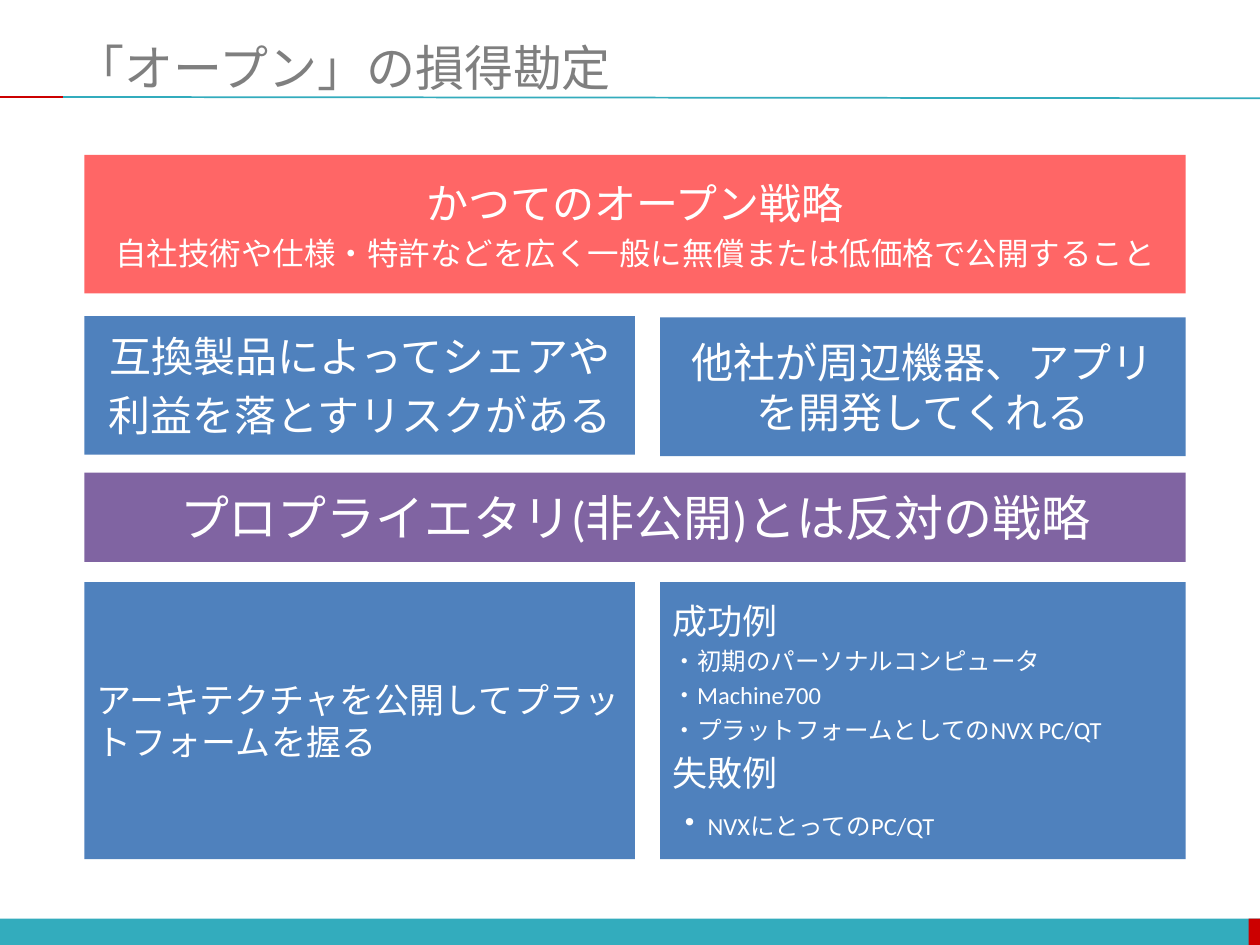
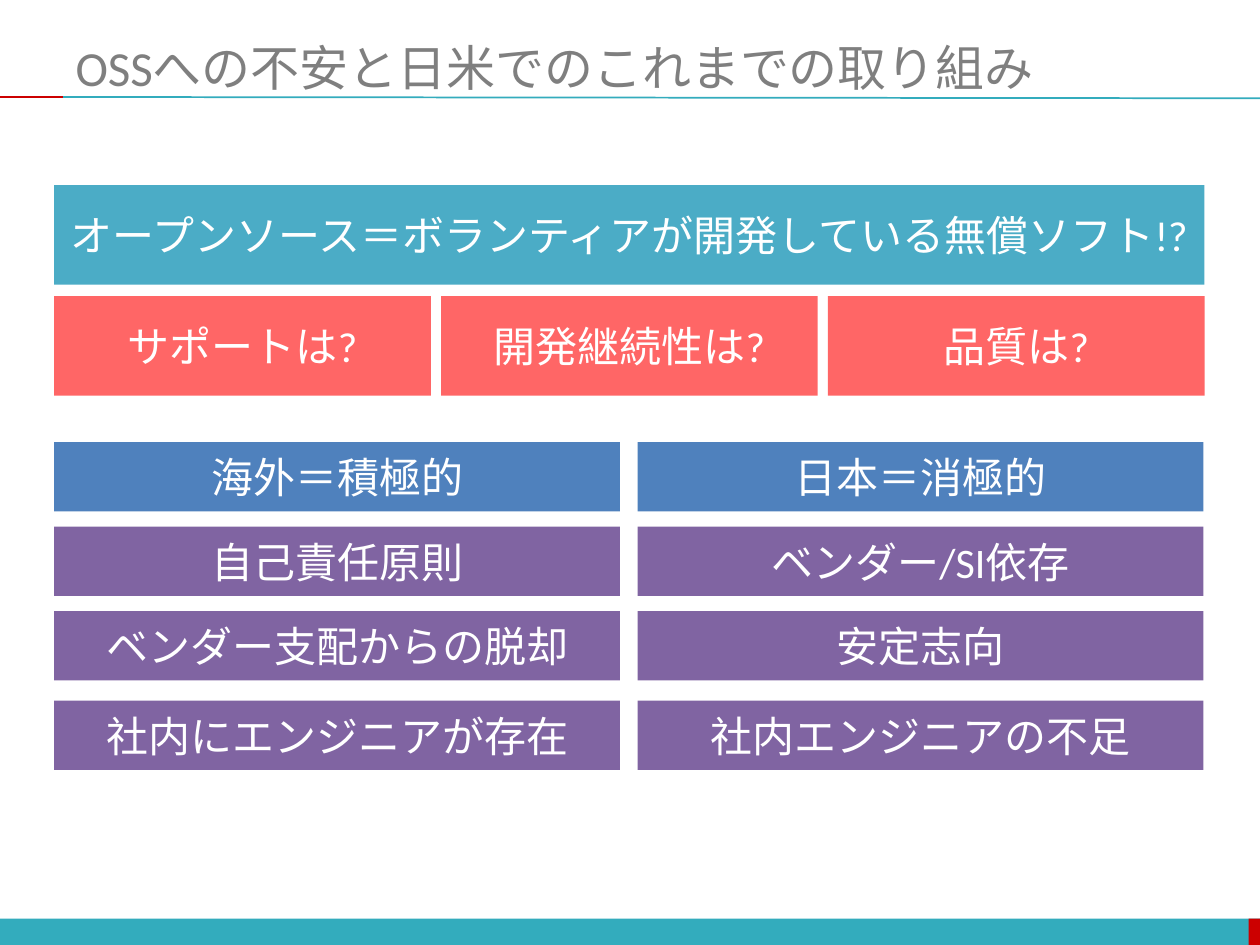
"""Build two slides on the trade-offs of open strategies and open source."""
from pptx import Presentation
from pptx.dml.color import RGBColor
from pptx.enum import shapes, text
from pptx.oxml import xmlchemy
from pptx.util import Inches, Pt

TEAL = RGBColor(0x33, 0xAC, 0xBD)
RED = RGBColor(0xCC, 0x00, 0x00)
GREY = RGBColor(0x7F, 0x7F, 0x7F)
WHITE = RGBColor(0xFF, 0xFF, 0xFF)
BLUE = RGBColor(0x4F, 0x81, 0xBD)
PURPLE = RGBColor(0x80, 0x64, 0xA2)
CORAL = RGBColor(0xFF, 0x66, 0x66)
AQUA = RGBColor(0x4B, 0xAC, 0xC6)
CENTER, LEFT = text.PP_ALIGN.CENTER, text.PP_ALIGN.LEFT


class Deck:
    """Holds the style and the current slide."""

    font = "Calibri"

    def __init__(self):
        self.prs = Presentation()
        self.prs.slide_width, self.prs.slide_height = Inches(10), Inches(7.5)
        self.s = None

    def slide(self, title):
        """Start a slide with the shared bands, rules and title."""
        self.s = self.prs.slides.add_slide(self.prs.slide_layouts[5])
        self.rect(0, 7.29, 10, 0.22, TEAL)
        self.rect(9.91, 7.29, 0.1, 0.22, RED)
        self.line(0.5, 0.77, 10, 0.78, TEAL)
        self.line(0, 0.77, 0.5, 0.77, RED)
        sp = self.s.shapes.title
        sp.left, sp.top = Inches(0.5), Inches(0.3)
        sp.width, sp.height = Inches(9.5), Inches(0.46)
        self.fill_text(sp.text_frame, [[(title, 28)]], LEFT, GREY)

    def line(self, x1, y1, x2, y2, color):
        """Draw a thin straight rule."""
        cn = self.s.shapes.add_connector(
            shapes.MSO_CONNECTOR.STRAIGHT,
            Inches(x1), Inches(y1), Inches(x2), Inches(y2))
        cn.line.color.rgb = color
        cn.line.width = Pt(1)
        cn._element.spPr.append(xmlchemy.OxmlElement("a:effectLst"))

    def rect(self, x, y, w, h, fill):
        """Draw a plain filled rectangle."""
        sp = self.s.shapes.add_shape(
            shapes.MSO_SHAPE.RECTANGLE,
            Inches(x), Inches(y), Inches(w), Inches(h))
        sp.shadow.inherit = False
        sp.fill.solid()
        sp.fill.fore_color.rgb = fill
        sp.line.fill.background()
        return sp

    def box(self, x, y, w, h, fill, *lines, align=CENTER):
        """Draw a rectangle with white text, each line a list of runs."""
        sp = self.rect(x, y, w, h, fill)
        self.fill_text(sp.text_frame, lines, align, WHITE)

    def fill_text(self, tf, lines, align, color):
        """Fill a text frame run by run."""
        tf.word_wrap = True
        tf.auto_size = text.MSO_AUTO_SIZE.NONE
        tf.vertical_anchor = text.MSO_ANCHOR.MIDDLE
        for i, runs in enumerate(lines):
            p = tf.add_paragraph() if i else tf.paragraphs[0]
            p.alignment = align
            p.space_before = Pt(0.2 * runs[0][1] if i else 0)
            for words, size in runs:
                r = p.add_run()
                r.text = words
                r.font.name = self.font
                r.font.size = Pt(size)
                r.font.color.rgb = color


def open_strategy(d):
    """Slide on the gains and losses of being open."""
    d.slide("「オープン」の損得勘定")
    left, right, w_left, w_right = 0.67, 5.24, 4.37, 4.17
    full = right + w_right - left
    d.box(left, 1.23, full, 1.1, CORAL,
          [("かつてのオープン戦略", 24)],
          [("自社技術や仕様・特許などを広く一般に無償または低価格で公開すること", 18)])
    d.box(left, 2.51, w_left, 1.1, BLUE,
          [("互換製品によってシェアや", 24)],
          [("利益を落とすリスクがある", 24)])
    d.box(right, 2.52, w_right, 1.1, BLUE,
          [("他社が周辺機器、アプリを開発してくれる", 24)])
    d.box(left, 3.75, full, 0.71, PURPLE,
          [("プロプライエタリ(非公開)とは反対の戦略", 28)])
    d.box(left, 4.62, w_left, 2.2, BLUE,
          [("アーキテクチャを公開してプラットフォームを握る", 20)], align=LEFT)
    d.box(right, 4.62, w_right, 2.2, BLUE,
          [("成功例", 20)],
          [("・初期のパーソナルコンピュータ", 14)],
          [("・Machine700", 14)],
          [("・プラットフォームとしてのNVX PC/QT", 14)],
          [("失敗例", 20)],
          [("・", 20), ("NVXにとってのPC/QT", 14)], align=LEFT)


def oss_concerns(d):
    """Slide on worries about OSS and the responses to them."""
    d.slide("OSSへの不安と日米でのこれまでの取り組み")
    left, full = 0.43, 9.13
    d.box(left, 1.47, full, 0.79, AQUA,
          [("オープンソース＝ボランティアが開発している無償ソフト!?", 24)])
    for i, worry in enumerate(["サポートは?", "開発継続性は?", "品質は?"]):
        d.box(left + 3.07 * i, 2.35, 2.99, 0.79, CORAL, [(worry, 24)])
    rows = [
        (3.51, BLUE, "海外＝積極的", "日本＝消極的"),
        (4.18, PURPLE, "自己責任原則", "ベンダー/SI依存"),
        (4.85, PURPLE, "ベンダー支配からの脱却", "安定志向"),
        (5.56, PURPLE, "社内にエンジニアが存在", "社内エンジニアの不足"),
    ]
    for y, fill, *cells in rows:
        for i, words in enumerate(cells):
            d.box(left + 4.63 * i, y, 4.49, 0.55, fill, [(words, 24)])


def main():
    """Build and save the deck."""
    d = Deck()
    open_strategy(d)
    oss_concerns(d)
    d.prs.save("out.pptx")


if __name__ == "__main__":
    main()
